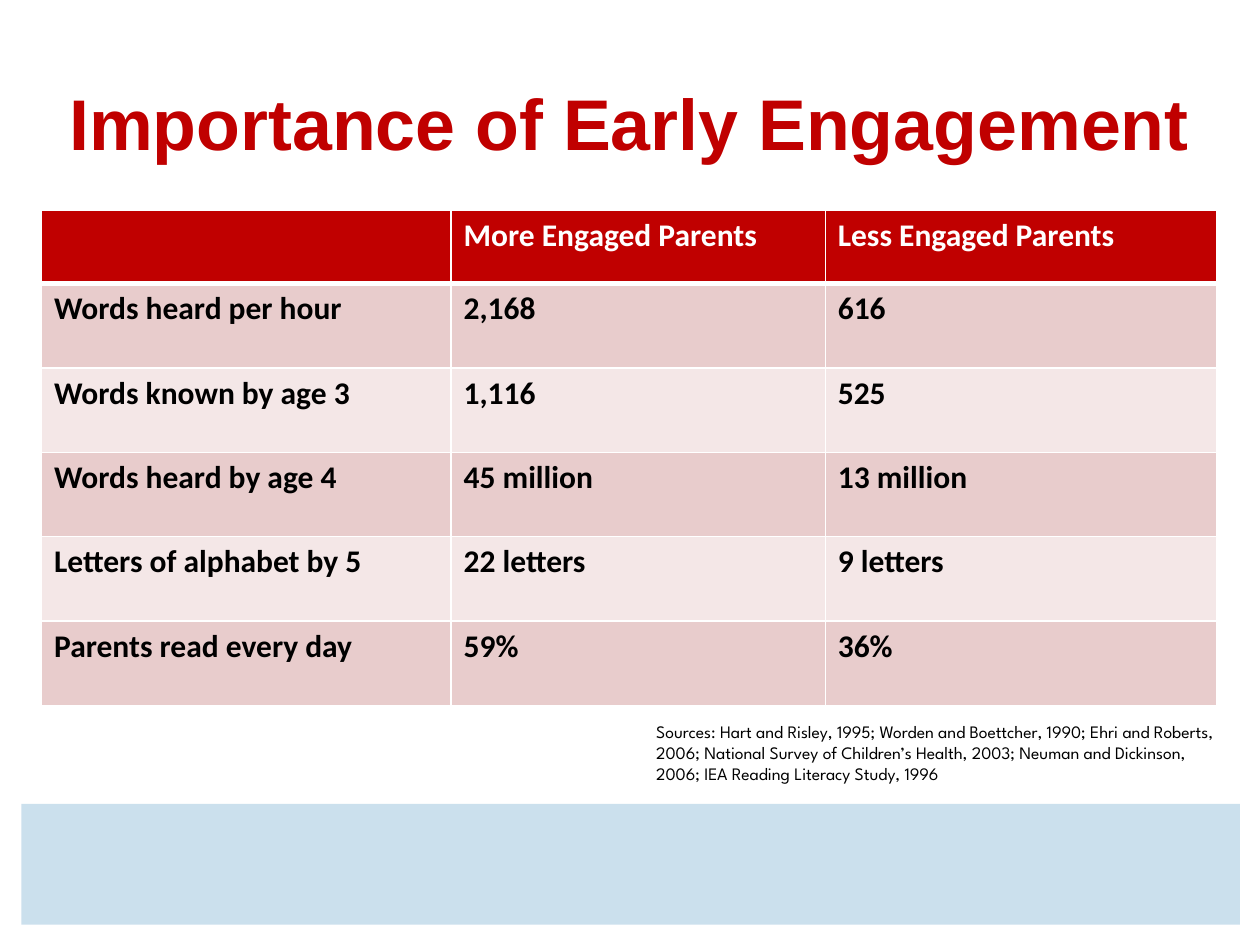
from dataclasses import dataclass

from lxml import etree
from pptx import Presentation
from pptx import util as u
from pptx.dml.color import RGBColor
from pptx.enum import shapes, text
from pptx.oxml.ns import qn

INK = {"red": "C00000", "white": "FFFFFF", "black": "000000",
       "rose": "E8CCCC", "blush": "F4E7E7", "sky": "CBE0ED"}


@dataclass
class Style:
    font: str
    size: float
    color: str
    bold: bool = False


@dataclass
class Label:
    words: str
    box: tuple[float, float, float, float]
    style: Style
    align: text.PP_ALIGN
    anchor: text.MSO_ANCHOR


HEAD = Style("Calibri", 18, "white", True)
BODY = Style("Calibri", 18, "black", True)
ROWS = [
    ("", "More Engaged Parents", "Less Engaged Parents"),
    ("Words heard per hour", "2,168", "616"),
    ("Words known by age 3", "1,116", "525"),
    ("Words heard by age 4", "45 million", "13 million"),
    ("Letters of alphabet by 5", "22 letters", "9 letters"),
    ("Parents read every day", "59%", "36%"),
]
WIDTHS = (3.25, 2.97, 3.11)
HEIGHTS = (0.58,) + (0.67,) * 5
LABELS = [
    Label("Sources: Hart and Risley, 1995; Worden and Boettcher, 1990; "
          "Ehri and Roberts, 2006; National Survey of Children’s Health, 2003; "
          "Neuman and Dickinson, 2006; IEA Reading Literacy Study, 1996",
          (5.11, 5.67, 4.64, 0.7), Style("League Spartan", 10, "black"),
          text.PP_ALIGN.LEFT, text.MSO_ANCHOR.TOP),
    Label("Importance of Early Engagement", (0.25, 0.25, 9.5, 1.44),
          Style("Arial", 41, "red", True),
          text.PP_ALIGN.CENTER, text.MSO_ANCHOR.MIDDLE),
]


def rgb(name: str) -> RGBColor:
    return RGBColor.from_string(INK[name])


def add_run(para, words: str, style: Style) -> None:
    run = para.add_run()
    run.text = words
    font = run.font
    font.name, font.size, font.bold = style.font, u.Pt(style.size), style.bold
    font.color.rgb = rgb(style.color)


def add_label(slide, label: Label) -> None:
    frame = slide.shapes.add_textbox(*map(u.Inches, label.box)).text_frame
    frame.word_wrap = True
    frame.vertical_anchor = label.anchor
    para = frame.paragraphs[0]
    para.alignment = label.align
    add_run(para, label.words, label.style)


def set_edges(cell, top: float, base: float) -> None:
    props = cell._tc.get_or_add_tcPr()
    edges = (("L", 1), ("R", 1), ("T", top), ("B", base))
    for spot, (side, width) in enumerate(edges):
        line = etree.Element(qn(f"a:ln{side}"), w=str(u.Pt(width)))
        fill = etree.SubElement(line, qn("a:solidFill"))
        etree.SubElement(fill, qn("a:srgbClr"), val=INK["white"])
        props.insert(spot, line)


def add_grid(slide) -> None:
    box = map(u.Inches, (0.33, 1.67, sum(WIDTHS), sum(HEIGHTS)))
    table = slide.shapes.add_table(len(ROWS), len(WIDTHS), *box).table
    for col, width in zip(table.columns, WIDTHS):
        col.width = u.Inches(width)
    for i, (row, height) in enumerate(zip(ROWS, HEIGHTS)):
        table.rows[i].height = u.Inches(height)
        shade = "red" if i == 0 else ("blush", "rose")[i % 2]
        for j, words in enumerate(row):
            cell = table.cell(i, j)
            cell.fill.solid()
            cell.fill.fore_color.rgb = rgb(shade)
            set_edges(cell, 3 if i == 1 else 1, 3 if i == 0 else 1)
            if words:
                add_run(cell.text_frame.paragraphs[0], words, BODY if i else HEAD)


def add_band(slide) -> None:
    box = map(u.Inches, (0.17, 6.38, 9.67, 0.96))
    band = slide.shapes.add_shape(shapes.MSO_SHAPE.RECTANGLE, *box)
    band.shadow.inherit = False
    band.fill.solid()
    band.fill.fore_color.rgb = rgb("sky")
    band.line.fill.background()


def main() -> None:
    deck = Presentation()
    deck.slide_width, deck.slide_height = u.Inches(10), u.Inches(7.5)
    slide = deck.slides.add_slide(deck.slide_layouts[6])
    # Comparison table
    add_grid(slide)
    # Sources and title
    for label in LABELS:
        add_label(slide, label)
    # Footer band
    add_band(slide)
    deck.save("out.pptx")


if __name__ == "__main__":
    main()
